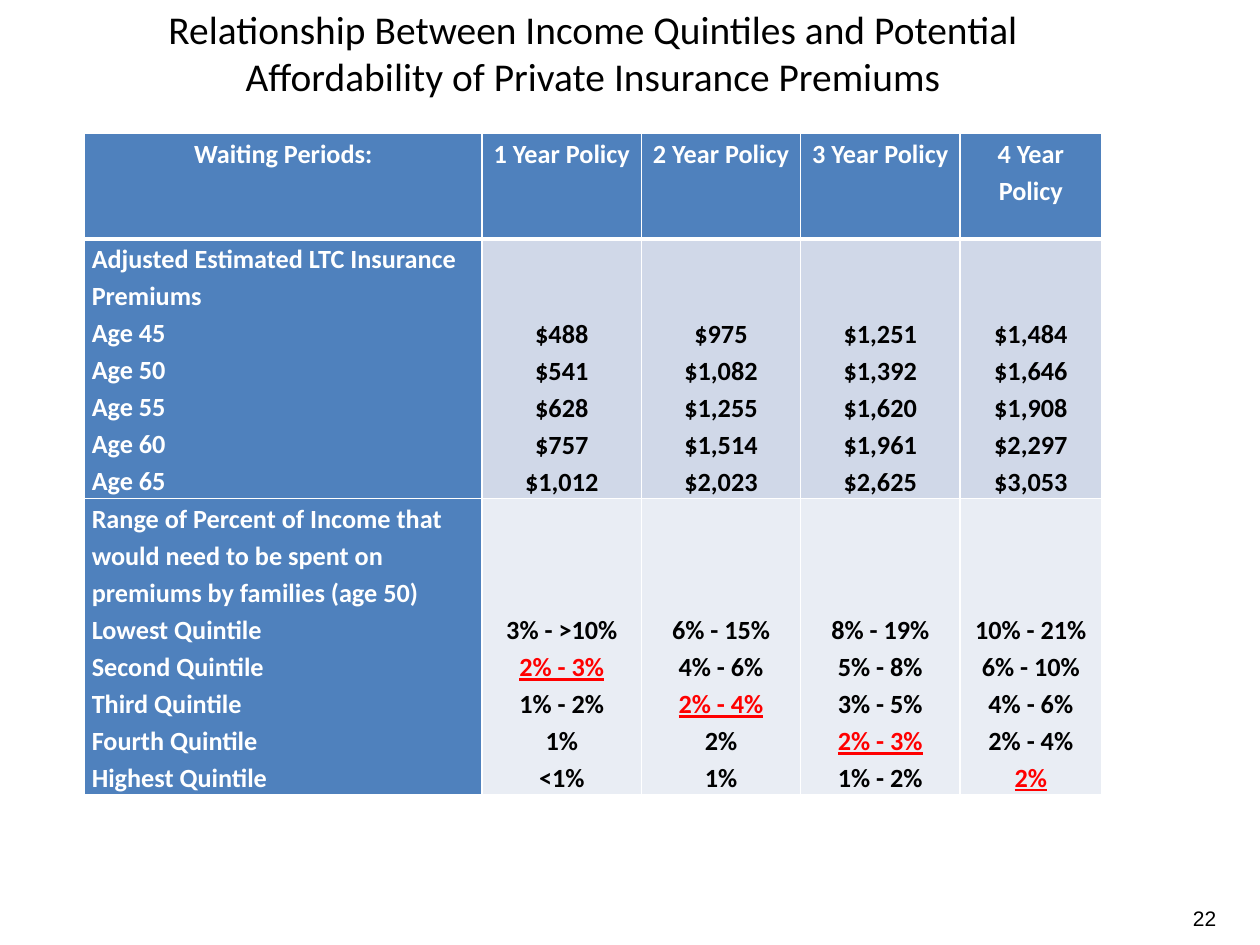
from dataclasses import dataclass

from lxml.etree import SubElement
from pptx import Presentation
from pptx.dml.color import RGBColor
from pptx.enum.text import MSO_ANCHOR, MSO_AUTO_SIZE, PP_ALIGN
from pptx.oxml.ns import qn
from pptx.util import Cm, Pt

BLACK = RGBColor(0x00, 0x00, 0x00)
WHITE = RGBColor(0xFF, 0xFF, 0xFF)
RED = RGBColor(0xFF, 0x00, 0x00)
BLUE = RGBColor(0x4F, 0x81, 0xBD)
PALE_BLUE = RGBColor(0xD0, 0xD8, 0xE8)
PALE_GREY = RGBColor(0xE9, 0xED, 0xF4)

TITLE = ("Relationship Between Income Quintiles and Potential "
         "Affordability of Private Insurance Premiums")
COLUMN_WIDTHS = [8.02, 3.21, 3.21, 3.21, 2.86]


@dataclass
class Band:
    """One table row: a label cell followed by four policy cells."""
    height: float
    label: list[str]
    policies: list[list[str]]
    fill: RGBColor
    is_header: bool = False
    highlights: tuple[int, ...] = ()  # highlighted line of each policy


BANDS = [
    Band(2.13, ["Waiting Periods:"],
         [[f"{years} Year Policy"] for years in range(1, 5)], BLUE, is_header=True),
    Band(5.23, ["Adjusted Estimated LTC Insurance Premiums",
                "Age 45", "Age 50", "Age 55", "Age 60", "Age 65"],
         [["$488", "$541", "$628", "$757", "$1,012"],
          ["$975", "$1,082", "$1,255", "$1,514", "$2,023"],
          ["$1,251", "$1,392", "$1,620", "$1,961", "$2,625"],
          ["$1,484", "$1,646", "$1,908", "$2,297", "$3,053"]], PALE_BLUE),
    Band(5.97, ["Range of Percent of Income that would need to be spent on "
                "premiums by families (age 50)",
                "Lowest Quintile", "Second Quintile", "Third Quintile",
                "Fourth Quintile", "Highest Quintile"],
         [["3% - >10%", "2% - 3%", "1% - 2%", "1%", "<1%"],
          ["6% - 15%", "4% - 6%", "2% - 4%", "2%", "1%"],
          ["8% - 19%", "5% - 8%", "3% - 5%", "2% - 3%", "1% - 2%"],
          ["10% - 21%", "6% - 10%", "4% - 6%", "2% - 4%", "2%"]],
         PALE_GREY, highlights=(1, 2, 3, 4)),
]


def add_run(p, text: str, font: str, size: float, color: RGBColor):
    r = p.add_run()
    r.text = text
    r.font.name = font
    r.font.size = Pt(size)
    r.font.color.rgb = color
    return r


def set_borders(cell, top: float, bottom: float) -> None:
    """Draw white cell borders; widths are in points."""
    tc_pr = cell._tc.get_or_add_tcPr()
    for side, width in (("L", 1), ("R", 1), ("T", top), ("B", bottom)):
        line = SubElement(tc_pr, qn(f"a:ln{side}"), w=str(Pt(width)))
        fill = SubElement(line, qn("a:solidFill"))
        SubElement(fill, qn("a:srgbClr"), val=str(WHITE))


def fill_cell(cell, lines: list[str], fill: RGBColor, color: RGBColor,
              align: PP_ALIGN, anchor: MSO_ANCHOR, highlight: int | None) -> None:
    cell.fill.solid()
    cell.fill.fore_color.rgb = fill
    cell.margin_left = cell.margin_right = Cm(0.15)
    cell.margin_top = cell.margin_bottom = 0
    cell.vertical_anchor = anchor
    tf = cell.text_frame
    for i, text in enumerate(lines):
        p = tf.paragraphs[0] if i == 0 else tf.add_paragraph()
        p.alignment = align
        p.line_spacing = 1.15
        r = add_run(p, text, "Calibri", 15, RED if i == highlight else color)
        r.font.bold = True
        r.font.underline = i == highlight


def add_premium_table(s) -> None:
    frame = s.shapes.add_table(len(BANDS), len(COLUMN_WIDTHS), Cm(1.7), Cm(2.69),
                               Cm(sum(COLUMN_WIDTHS)), Cm(sum(b.height for b in BANDS)))
    table = frame.table
    table.horz_banding = False
    for column, width in zip(table.columns, COLUMN_WIDTHS):
        column.width = Cm(width)
    for i, band in enumerate(BANDS):
        table.rows[i].height = Cm(band.height)
        for j, lines in enumerate([band.label, *band.policies]):
            is_label = j == 0
            cell = table.cell(i, j)
            set_borders(cell, top=3 if i == 1 else 1, bottom=3 if band.is_header else 1)
            fill_cell(
                cell, lines,
                fill=BLUE if is_label else band.fill,
                color=WHITE if is_label or band.is_header else BLACK,
                align=PP_ALIGN.LEFT if is_label and not band.is_header else PP_ALIGN.CENTER,
                # Values sit at the bottom, level with their row labels
                anchor=MSO_ANCHOR.TOP if is_label or band.is_header else MSO_ANCHOR.BOTTOM,
                highlight=band.highlights[j - 1] if band.highlights and not is_label else None)


def add_title(s) -> None:
    title = s.shapes.title
    title.left, title.top, title.width, title.height = Cm(1.7), Cm(0.2), Cm(20.52), Cm(1.7)
    tf = title.text_frame
    tf.word_wrap = True
    tf.auto_size = MSO_AUTO_SIZE.NONE
    tf.vertical_anchor = MSO_ANCHOR.MIDDLE
    p = tf.paragraphs[0]
    p.alignment = PP_ALIGN.CENTER
    add_run(p, TITLE, "Calibri", 22.5, BLACK)


def add_page_number(s, number: str) -> None:
    sp = s.shapes.add_textbox(Cm(18.85), Cm(18), Cm(5.92), Cm(1.02))
    tf = sp.text_frame
    tf.word_wrap = True
    tf.vertical_anchor = MSO_ANCHOR.MIDDLE
    p = tf.paragraphs[0]
    p.alignment = PP_ALIGN.RIGHT
    add_run(p, number, "Arial", 12, BLACK)


def main() -> None:
    prs = Presentation()
    prs.slide_width, prs.slide_height = Cm(25.4), Cm(19.05)
    s = prs.slides.add_slide(prs.slide_layouts[5])  # title only
    add_title(s)
    add_premium_table(s)
    add_page_number(s, "22")
    prs.save("out.pptx")


if __name__ == "__main__":
    main()
